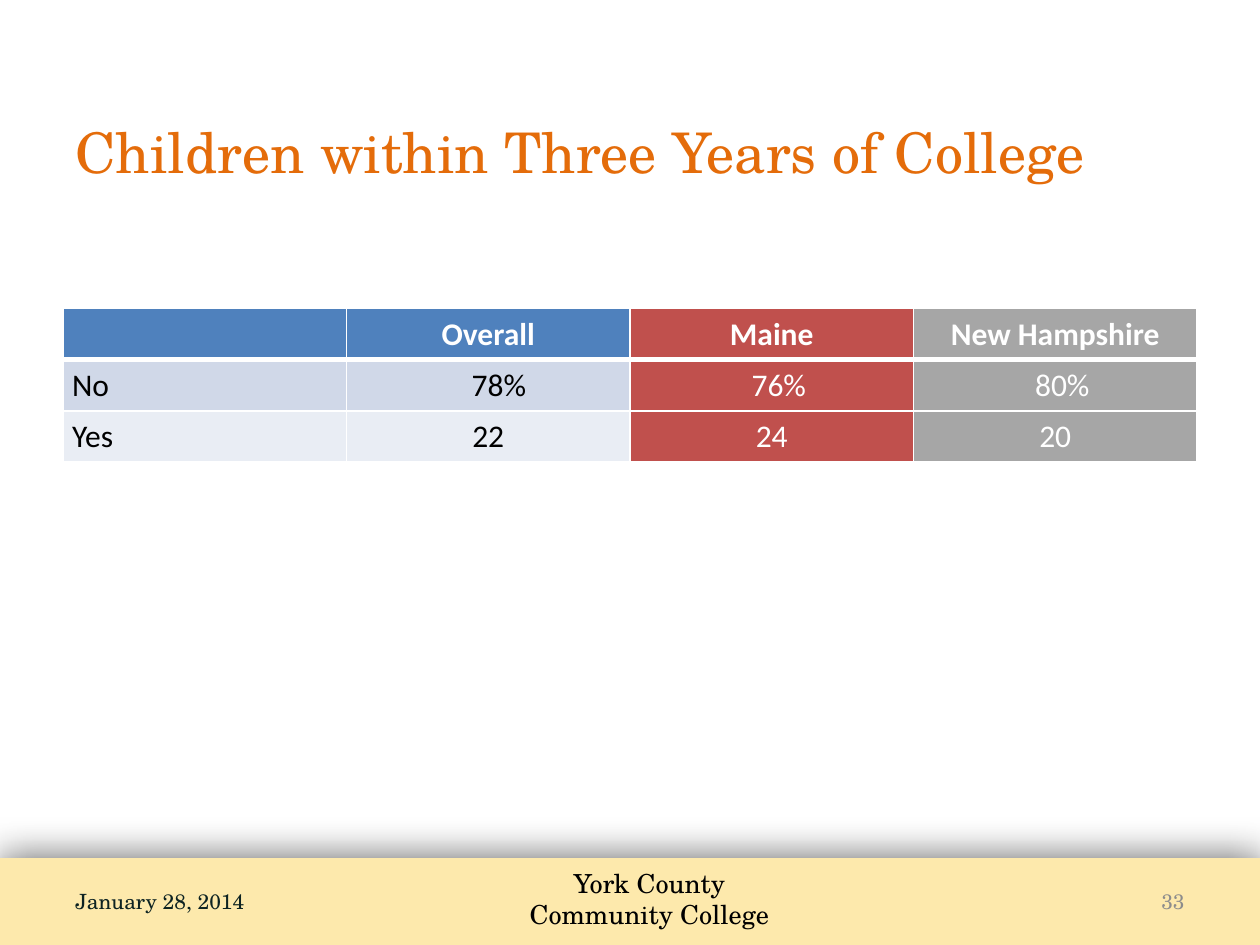
import dataclasses
import typing

import lxml.etree
import pptx
import pptx.dml.color
import pptx.enum.shapes
import pptx.enum.text
import pptx.oxml.ns
import pptx.util

Pt = pptx.util.Pt
RGB = pptx.dml.color.RGBColor
Align = pptx.enum.text.PP_ALIGN
Anchor = pptx.enum.text.MSO_ANCHOR
qn = pptx.oxml.ns.qn

WHITE = RGB(0xFF, 0xFF, 0xFF)
BLACK = RGB(0, 0, 0)
CREAM = RGB(0xFD, 0xE9, 0xAC)
ORANGE = RGB(0xE4, 0x6C, 0x0A)
DARK_GREEN = RGB(0x0D, 0x23, 0x22)
PAGE_GRAY = RGB(0x8C, 0x8C, 0x8C)
BLUE = RGB(0x4F, 0x81, 0xBD)
RED = RGB(0xC0, 0x50, 0x4D)
GRAY = RGB(0xA6, 0xA6, 0xA6)
BLUE_BAND = RGB(0xD0, 0xD8, 0xE8)
PALE_BAND = RGB(0xE9, 0xED, 0xF4)

SERIF = "TeX Gyre Schola"
SANS = "Calibri"
COL_WIDTH, ROW_HEIGHT = 162, 29.2
SIDE_MARGIN = 5.2


@dataclasses.dataclass
class Label:
    lines: list[str]
    left: float
    top: float
    width: float
    height: float
    size: float
    color: RGB
    align: Align = Align.LEFT
    anchor: Anchor = Anchor.MIDDLE


@dataclasses.dataclass
class Row:
    values: list[str]
    fills: list[RGB]
    indents: list[float]
    header: bool = False


LABELS = [
    Label(["York County", "Community College"], 278.6, 491.8, 185, 44, 15, BLACK, Align.CENTER, Anchor.TOP),
    Label(["Children within Three Years of College"], 36, 59, 648, 54.7, 32, ORANGE),
    Label(["January 28, 2014"], 36, 500.5, 180, 28.8, 12, DARK_GREEN),
    Label(["33"], 516, 500.5, 168, 28.8, 12, PAGE_GRAY, Align.RIGHT),
]
ROWS = [
    Row(["", "Overall", "Maine", "New Hampshire"], [BLUE, BLUE, RED, GRAY], [0, 0, 0, 0], True),
    Row(["No", "78%", "76%", "80%"], [BLUE_BAND, BLUE_BAND, RED, GRAY], [0, 12.2, 8.1, 8.1]),
    Row(["Yes", "22", "24", "20"], [PALE_BAND, PALE_BAND, RED, GRAY], [0, 0, 0, 0]),
]


def add_run(p: typing.Any, text: str, font: str, size: float, color: RGB, bold: bool = False) -> None:
    r = p.add_run()
    r.text = text
    r.font.name = font
    r.font.size = Pt(size)
    r.font.color.rgb = color
    r.font.bold = bold


def add_label(s: typing.Any, label: Label) -> None:
    sp = s.shapes.add_textbox(Pt(label.left), Pt(label.top), Pt(label.width), Pt(label.height))
    tf = sp.text_frame
    tf.word_wrap = True
    tf.vertical_anchor = label.anchor
    for i, line in enumerate(label.lines):
        p = tf.add_paragraph() if i else tf.paragraphs[0]
        p.alignment = label.align
        add_run(p, line, SERIF, label.size, label.color)


def add_footer_bar(s: typing.Any) -> None:
    sp = s.shapes.add_shape(pptx.enum.shapes.MSO_SHAPE.RECTANGLE, 0, Pt(490.3), Pt(720), Pt(49.7))
    sp.shadow.inherit = False
    sp.fill.solid()
    sp.fill.fore_color.rgb = CREAM
    sp.line.fill.background()
    effects = sp._element.spPr.find(qn("a:effectLst"))
    shadow = lxml.etree.SubElement(effects, qn("a:outerShdw"), blurRad=str(Pt(23.8)), dist="0",
                                   dir="18000000", rotWithShape="0")
    color = lxml.etree.SubElement(shadow, qn("a:srgbClr"), val=str(BLACK))
    lxml.etree.SubElement(color, qn("a:alpha"), val="65000")


def add_border(cell: typing.Any, side: str, width: float) -> None:
    ln = lxml.etree.SubElement(cell._tc.get_or_add_tcPr(), qn(f"a:ln{side}"), w=str(Pt(width)))
    fill = lxml.etree.SubElement(ln, qn("a:solidFill"))
    lxml.etree.SubElement(fill, qn("a:srgbClr"), val=str(WHITE))


def fill_cell(cell: typing.Any, row: Row, row_no: int, col: int) -> None:
    thick = {(0, "B"), (1, "T")}
    for side in "LRTB":
        add_border(cell, side, 3 if (row_no, side) in thick else 1)
    cell.fill.solid()
    cell.fill.fore_color.rgb = row.fills[col]
    plain = not row.header and col < 2
    if plain:
        cell.vertical_anchor = Anchor.MIDDLE
        cell.margin_top = cell.margin_bottom = 0
        cell.margin_right = Pt(SIDE_MARGIN)
    cell.margin_left = Pt((SIDE_MARGIN if plain else 7.2) + row.indents[col])
    p = cell.text_frame.paragraphs[0]
    p.alignment = Align.CENTER if col else Align.LEFT
    if row.values[col]:
        add_run(p, row.values[col], SANS, 18, BLACK if plain else WHITE, row.header)


def add_results_table(s: typing.Any) -> None:
    cols = len(ROWS[0].values)
    table = s.shapes.add_table(len(ROWS), cols, Pt(36), Pt(176.4),
                               Pt(cols * COL_WIDTH), Pt(len(ROWS) * ROW_HEIGHT)).table
    table.horz_banding = False
    for column in table.columns:
        column.width = Pt(COL_WIDTH)
    for row_no, row in enumerate(ROWS):
        table.rows[row_no].height = Pt(ROW_HEIGHT)
        for col in range(cols):
            fill_cell(table.cell(row_no, col), row, row_no, col)


def main() -> None:
    prs = pptx.Presentation()
    prs.slide_width, prs.slide_height = Pt(720), Pt(540)
    s = prs.slides.add_slide(prs.slide_layouts[6])
    add_footer_bar(s)
    for label in LABELS:
        add_label(s, label)
    add_results_table(s)
    prs.save("out.pptx")


if __name__ == "__main__":
    main()
